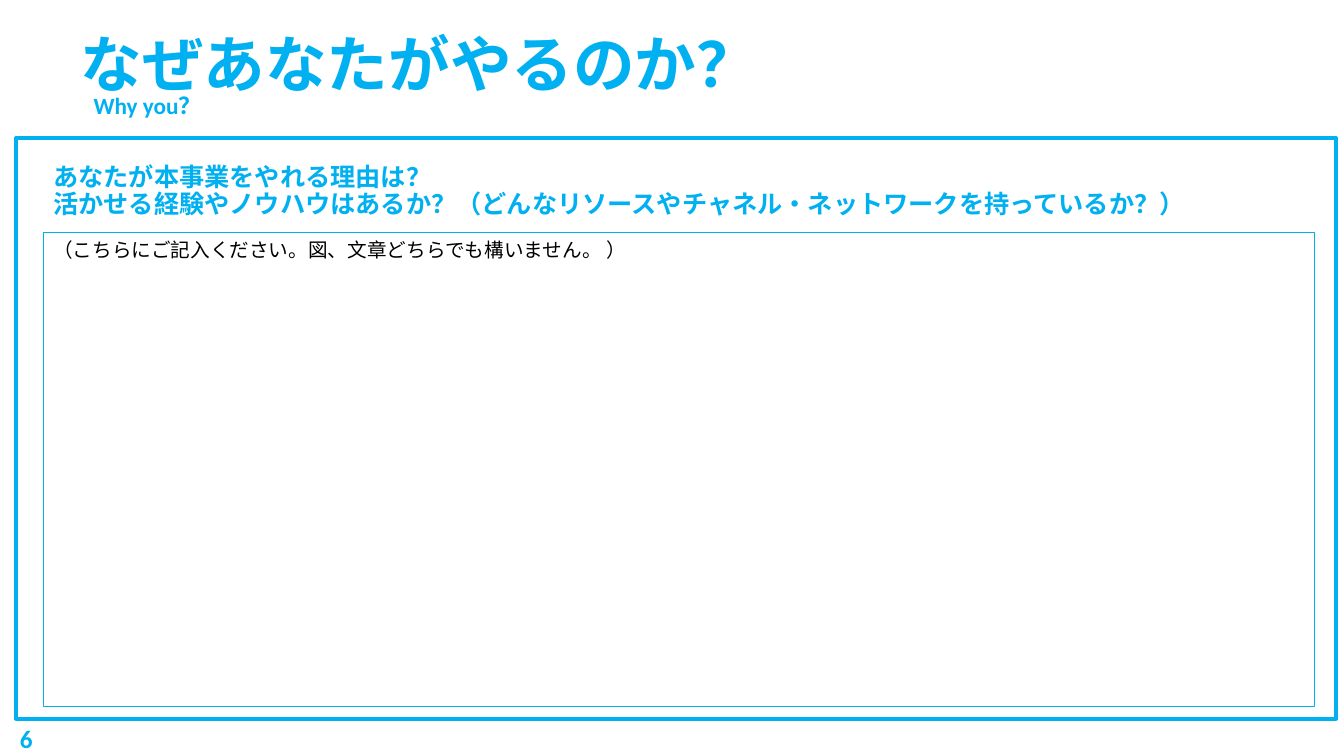
"""Builds the "Why you?" worksheet slide with its question and answer box."""
import pptx
import pptx.dml.color
import pptx.enum.shapes
import pptx.enum.text
import pptx.util

SKY = "00B0F0"
WHITE = "FFFFFF"
BLACK = "000000"
MIDDLE = pptx.enum.text.MSO_ANCHOR.MIDDLE
TOP = pptx.enum.text.MSO_ANCHOR.TOP

presentation = pptx.Presentation()
presentation.slide_width = pptx.util.Inches(13.33)
presentation.slide_height = pptx.util.Inches(7.5)
slide = presentation.slides.add_slide(presentation.slide_layouts[6])


def color(hex_value):
    return pptx.dml.color.RGBColor.from_string(hex_value)


def write(shape, text, size, ink=SKY, bold=True, anchor=MIDDLE, spacing=1.0):
    frame = shape.text_frame
    frame.word_wrap = True
    frame.vertical_anchor = anchor
    frame.text = text
    for paragraph in frame.paragraphs:
        paragraph.alignment = pptx.enum.text.PP_ALIGN.LEFT
        paragraph.line_spacing = spacing
        font = paragraph.font
        font.name = "Calibri"
        font.size = pptx.util.Pt(size)
        font.bold = bold
        font.color.rgb = color(ink)


panels = []
for left, top, width, height, line_width in [
    (0.16, 1.37, 13.09, 5.76, 3),
    (0.43, 2.31, 12.61, 4.7, 1),
]:
    box = [pptx.util.Inches(length) for length in (left, top, width, height)]
    panel = slide.shapes.add_shape(pptx.enum.shapes.MSO_SHAPE.RECTANGLE, *box)
    panel.shadow.inherit = False
    panel.fill.solid()
    panel.fill.fore_color.rgb = color(WHITE)
    panel.line.color.rgb = color(SKY)
    panel.line.width = pptx.util.Pt(line_width)
    panels.append(panel)

answer_panel = panels[1]
write(answer_panel, "（こちらにご記入ください。図、文章どちらでも構いません。 ）",
      14, ink=BLACK, bold=False, anchor=TOP)

question = ("あなたが本事業をやれる理由は？\n"
            "活かせる経験やノウハウはあるか？（どんなリソースやチャネル・ネットワークを持っているか？）")
for left, top, width, height, text, size, spacing in [
    (0.7, -0.06, 11.5, 1.45, "なぜあなたがやるのか？", 44, 0.9),
    (0.83, 0.89, 2.02, 0.35, "Why you？", 16.6, 0.8),
    (0.43, 1.48, 12.01, 0.84, question, 18, 0.9),
    (0.1, 7.13, 3, 0.4, "6", 18, 1.0),
]:
    box = [pptx.util.Inches(length) for length in (left, top, width, height)]
    write(slide.shapes.add_textbox(*box), text, size, spacing=spacing)

presentation.save("out.pptx")
